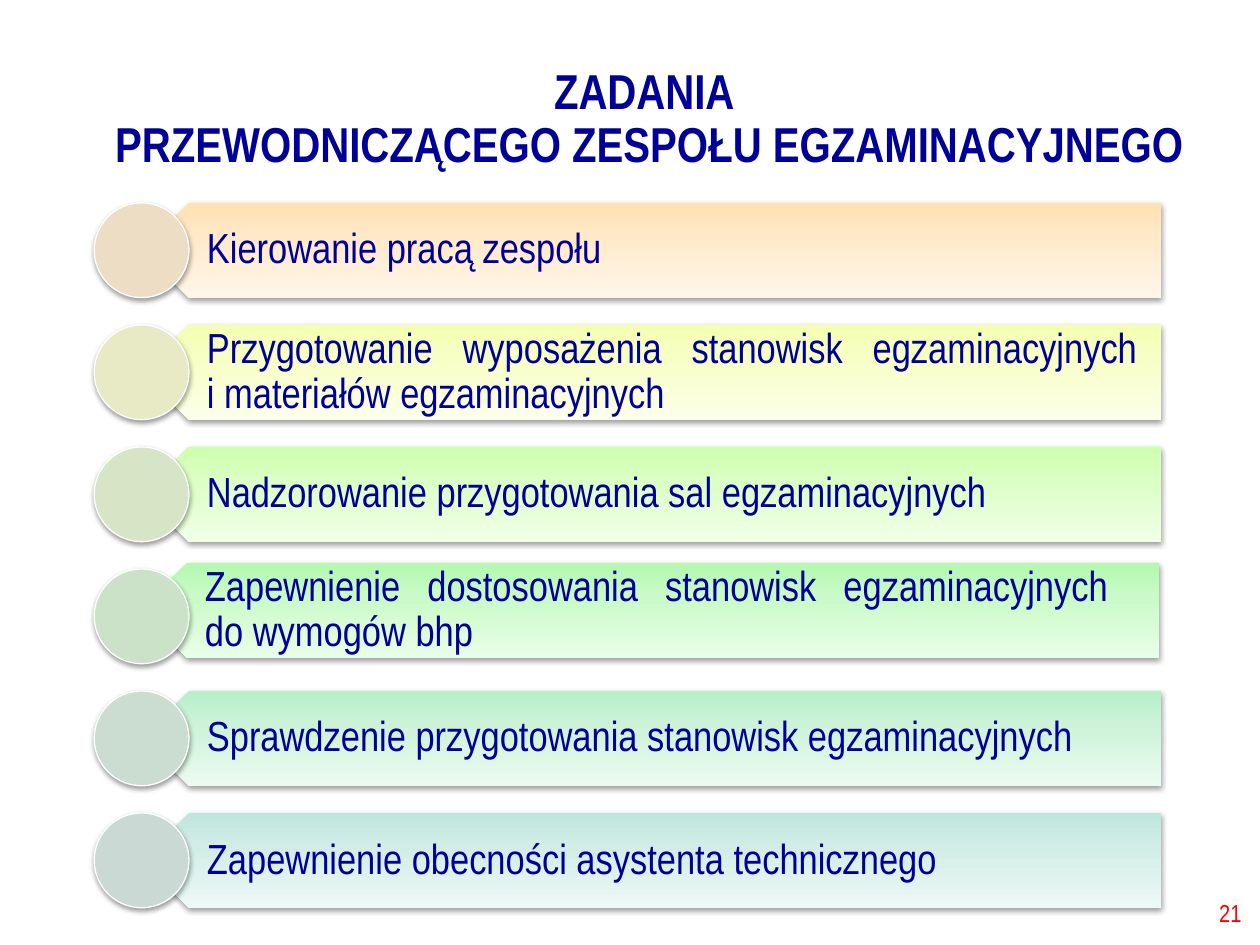
from lxml import etree
from pptx import Presentation
from pptx.dml.color import RGBColor
from pptx.enum.shapes import MSO_SHAPE
from pptx.enum.text import MSO_ANCHOR, PP_ALIGN
from pptx.oxml import parse_xml
from pptx.oxml.ns import nsdecls, qn
from pptx.util import Cm, Pt

FONT = "Arial Narrow"
COLORS = {"navy": "000099", "red": "FF0000", "white": "FFFFFF", "shadow": "000000"}

# Text, circle colour, bar gradient (bottom to top), alignment, bar shift in cm (x, y)
LEFT, JUSTIFY = PP_ALIGN.LEFT, PP_ALIGN.JUSTIFY
TASKS = [
    ("Kierowanie pracą zespołu", "EDDDC4",
     ("FFE1B2", "FFE9C8", "FFF6EA"), LEFT, (0, 0)),
    ("Przygotowanie wyposażenia stanowisk egzaminacyjnych\vi materiałów egzaminacyjnych",
     "E8E9C5", ("F4FFAF", "F7FFC6", "FCFFE9"), JUSTIFY, (0, 0)),
    ("Nadzorowanie przygotowania sal egzaminacyjnych", "D7E5C7",
     ("CDFFAC", "DBFFC4", "F1FFE8"), LEFT, (0, 0)),
    ("Zapewnienie dostosowania stanowisk egzaminacyjnych \vdo wymogów bhp",
     "CBE1C8", ("B3F9AF", "C9FAC7", "E9FEE8"), JUSTIFY, (-0.04, -0.12)),
    ("Sprawdzenie przygotowania stanowisk egzaminacyjnych", "CADDD0",
     ("B6F0C8", "CCF3D8", "EBFBF0"), LEFT, (0, 0)),
    ("Zapewnienie obecności asystenta technicznego", "CBD9D5",
     ("BEE6DC", "D1EDE6", "EDF9F6"), LEFT, (0, 0)),
]


def rgb(value):
    return RGBColor.from_string(value)


def add_shadow(shape):
    shape.shadow.inherit = False
    effects = shape._element.spPr.find(qn("a:effectLst"))
    outer = etree.SubElement(effects, qn("a:outerShdw"), blurRad=str(Pt(3.1)),
                             dist=str(Pt(1.6)), dir="5400000", rotWithShape="0")
    color = etree.SubElement(outer, qn("a:srgbClr"), val=COLORS["shadow"])
    etree.SubElement(color, qn("a:alpha"), val="38000")


def fill_gradient(shape, colors):
    stops = "".join(f'<a:gs pos="{pos}"><a:srgbClr val="{color}"/></a:gs>'
                    for pos, color in zip((0, 35000, 100000), colors))
    gradient = parse_xml(f'<a:gradFill {nsdecls("a")} rotWithShape="1"><a:gsLst>{stops}'
                         '</a:gsLst><a:lin ang="16200000" scaled="1"/></a:gradFill>')
    shape._element.spPr.find(qn("a:prstGeom")).addnext(gradient)


def add_text(page, box, text, size, color, align, spacing=None, bold=False):
    frame = page.shapes.add_textbox(*map(Cm, box)).text_frame
    frame.word_wrap = True
    frame.vertical_anchor = MSO_ANCHOR.MIDDLE
    para = frame.paragraphs[0]
    para.text = text
    para.alignment = align
    para.line_spacing = spacing
    para.font.name = FONT
    para.font.size = Pt(size)
    para.font.bold = bold
    para.font.color.rgb = rgb(color)
    return frame


def add_task(page, box, task):
    text, circle_color, bar_colors, align, (shift_x, shift_y) = task
    left, top, width, height = box
    bar_left, bar_top = left + height / 2 + shift_x, top + shift_y
    bar_width = width - height / 2

    # Bar pointing left
    bar = page.shapes.add_shape(MSO_SHAPE.PENTAGON, Cm(bar_left), Cm(bar_top),
                                Cm(bar_width), Cm(height))
    bar.rotation = 180
    fill_gradient(bar, bar_colors)
    bar.line.fill.background()
    add_shadow(bar)

    # Upright text over the bar
    indent = height / 4
    frame = add_text(page, (bar_left + indent, bar_top, bar_width - indent, height),
                     text, 24, COLORS["navy"], align, 0.9)
    frame.margin_left, frame.margin_right = Cm(0.84), Cm(0.48)
    frame.margin_top = frame.margin_bottom = Cm(0.25)

    # Circle over the tip
    circle = page.shapes.add_shape(MSO_SHAPE.OVAL, Cm(left), Cm(top), Cm(height), Cm(height))
    circle.fill.solid()
    circle.fill.fore_color.rgb = rgb(circle_color)
    circle.line.color.rgb = rgb(COLORS["white"])
    circle.line.width = Pt(0.75)
    add_shadow(circle)


def add_task_list(page, box):
    left, top, width, height = box
    row_height = 1.91
    pitch = (height - row_height) / (len(TASKS) - 1)
    for index, task in enumerate(TASKS):
        add_task(page, (left, top + index * pitch, width, row_height), task)


def main():
    deck = Presentation()
    deck.slide_width, deck.slide_height = Cm(25.4), Cm(19.05)
    page = deck.slides.add_slide(deck.slide_layouts[6])

    add_task_list(page, (1.9, 4.09, 21.5, 14.21))
    # Slide number
    add_text(page, (19.56, 17.88, 5.72, 1.02), "21", 14, COLORS["red"], PP_ALIGN.RIGHT)
    # Title
    add_text(page, (1.68, 1.78, 22.81, 1.3),
             "ZADANIA \vPRZEWODNICZĄCEGO ZESPOŁU EGZAMINACYJNEGO",
             28, COLORS["navy"], PP_ALIGN.CENTER, 0.9, bold=True)
    deck.save("out.pptx")


if __name__ == "__main__":
    main()
